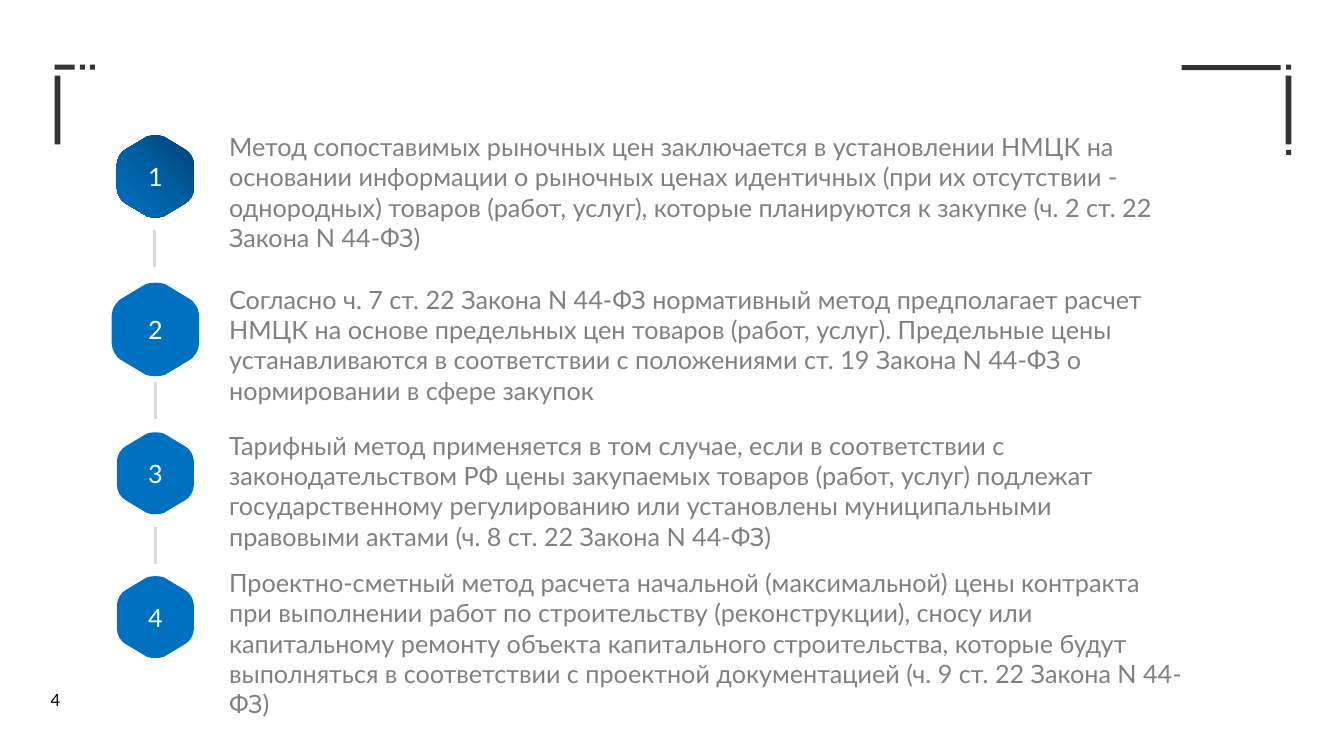
import copy
from dataclasses import dataclass

import pptx
import pptx.dml.color
import pptx.enum.dml
import pptx.enum.shapes
import pptx.enum.text
import pptx.oxml
import pptx.oxml.ns
import pptx.util

qn = pptx.oxml.ns.qn
ALIGN = pptx.enum.text.PP_ALIGN
ANCHOR = pptx.enum.text.MSO_ANCHOR
FIT = pptx.enum.text.MSO_AUTO_SIZE.SHAPE_TO_FIT_TEXT


@dataclass(frozen=True)
class Theme:
    font: str = "Lato"
    body_size: int = 18
    number_size: int = 12
    line_width: int = 2
    frame: str = "333333"
    badge: str = "0070C0"
    badge_gradient: tuple = ((0, "004272"), (0.5, "005EA2"), (1, "0070C0"))
    gradient_angle: int = 225
    connector: str = "D9D9D9"
    body: str = "808080"
    badge_text: str = "FFFFFF"
    number: str = "000000"


THEME = Theme()
COLUMNS, ROWS = 160, 90
CELL = pptx.util.Inches(1 / 12)
BADGE_CENTER = 18.5
BADGE_SIZE = (9.15, 9.85)
LARGE_BADGE_SIZE = (10.4, 11.25)
TEXT_LEFT = 27.28
CONNECTOR_LENGTH = 4.4

# left, top, width, height in grid cells
FRAME_BARS = [
    (6.5, 7.7, 2.4, 0.6), (9.5, 7.7, 0.6, 0.6), (10.7, 7.7, 0.6, 0.6),
    (6.5, 9, 0.7, 8.2),
    (153.1, 7.7, 0.6, 0.6), (140.68, 7.75, 11.8, 0.6),
    (153.05, 9, 0.7, 8.2), (153.1, 17.85, 0.6, 0.6),
]
# centre column, top row
CONNECTORS = [(18.38, 27.4), (BADGE_CENTER, 45.5), (BADGE_CENTER, 62.75)]

# badge centre row, badge size, text top, text width, text height, paragraphs
METHODS = [
    (21, BADGE_SIZE, 15.64, 117, 10.92, [
        "Метод сопоставимых рыночных цен заключается в установлении НМЦК на "
        "основании информации о рыночных ценах идентичных (при их отсутствии - "
        "однородных) товаров (работ, услуг), которые планируются к закупке "
        "(ч. 2 ст. 22 Закона N 44-ФЗ)"]),
    (39.22, LARGE_BADGE_SIZE, 33.84, 117, 10.92, [
        "Согласно ч. 7 ст. 22 Закона N 44-ФЗ нормативный метод предполагает "
        "расчет НМЦК на основе предельных цен товаров (работ, услуг). "
        "Предельные цены устанавливаются в соответствии с положениями ст. 19 "
        "Закона N 44-ФЗ о нормировании в сфере закупок"]),
    (56.34, BADGE_SIZE, 51.22, 114.6, 10.92, [
        "Тарифный метод применяется в том случае, если в соответствии с "
        "законодательством РФ цены закупаемых товаров (работ, услуг) подлежат "
        "государственному регулированию или установлены муниципальными "
        "правовыми актами (ч. 8 ст. 22 Закона N 44-ФЗ)"]),
    (73.46, BADGE_SIZE, 67.54, 116.9, 14.5, [
        "Проектно-сметный метод расчета начальной (максимальной) цены контракта",
        "при выполнении работ по строительству (реконструкции), сносу или "
        "капитальному ремонту объекта капитального строительства, которые "
        "будут выполняться в соответствии с проектной документацией "
        "(ч. 9 ст. 22 Закона N 44-ФЗ)"]),
]


def cells(*values):
    return [round(value * CELL) for value in values]


def color(value):
    return pptx.dml.color.RGBColor.from_string(value)


def write_text(shape, paragraphs, *, size, fill, align=ALIGN.LEFT,
               anchor=ANCHOR.TOP, insets=(0, 0, 0, 0), wrap=True,
               fit=pptx.enum.text.MSO_AUTO_SIZE.NONE):
    """Fill a shape with plain, unbulleted paragraphs; insets are in inches."""
    frame = shape.text_frame
    frame.word_wrap = wrap
    frame.auto_size = fit
    frame.vertical_anchor = anchor
    (frame.margin_left, frame.margin_top,
     frame.margin_right, frame.margin_bottom) = map(pptx.util.Inches, insets)
    frame.text = "\n".join(paragraphs)
    for paragraph in frame.paragraphs:
        paragraph.alignment = align
        paragraph.space_before = paragraph.space_after = pptx.util.Pt(0)
        properties = paragraph._p.get_or_add_pPr()
        properties.set("marL", "0")
        properties.set("indent", "0")
        properties.append(pptx.oxml.parse_xml(
            f"<a:buNone {pptx.oxml.ns.nsdecls('a')}/>"))
        font = paragraph.runs[0].font
        font.name, font.size, font.bold = THEME.font, pptx.util.Pt(size), False
        font.color.rgb = color(fill)


def paint(shape, fill):
    shape.shadow.inherit = False
    shape.fill.solid()
    shape.fill.fore_color.rgb = color(fill)
    shape.line.fill.background()


def paint_gradient(shape, stops, angle):
    shape.fill.gradient()
    shape.fill.gradient_angle = angle
    stop_list = shape._element.spPr.find(".//" + qn("a:gsLst"))
    stop_list.insert(1, copy.deepcopy(stop_list[0]))
    for stop, (position, value) in zip(shape.fill.gradient_stops, stops):
        stop.position = position
        stop.color.rgb = color(value)


def add_bar(slide, left, top, width, height):
    bar = slide.shapes.add_shape(pptx.enum.shapes.MSO_SHAPE.RECTANGLE,
                                 *cells(left, top, width, height))
    paint(bar, THEME.frame)


def hexagon_corners():
    """Start, two handles and end of each corner, clockwise in a unit square."""
    side = [(0, 0.35), (0, 0.29), (0.05, 0.2), (0.12, 0.17)]
    tip = [(0.39, 0.02), (0.45, 0), (0.55, 0), (0.61, 0.02)]
    upper = side + tip + [(1 - x, y) for x, y in reversed(side)]
    return upper + [(1 - x, 1 - y) for x, y in upper]


def round_corners(shape):
    """Turn the three segments that make up each corner into one curve."""
    lines = shape._element.spPr.findall(".//" + qn("a:lnTo"))
    for first in range(0, len(lines) - 2, 4):
        corner = lines[first:first + 3]
        bezier = pptx.oxml.parse_xml(
            f"<a:cubicBezTo {pptx.oxml.ns.nsdecls('a')}/>")
        corner[0].addprevious(bezier)
        for line in corner:
            bezier.append(line[0])
            line.getparent().remove(line)


def add_badge(slide, number, center_row, size):
    width, height = size
    left, top = BADGE_CENTER - width / 2, center_row - height / 2
    points = [tuple(cells(left + x * width, top + y * height))
              for x, y in hexagon_corners()]
    builder = slide.shapes.build_freeform(*points[0])
    builder.add_line_segments(points[1:], close=True)
    badge = builder.convert_to_shape()
    round_corners(badge)
    paint(badge, THEME.badge)
    write_text(badge, [str(number)], size=THEME.body_size, fill=THEME.badge_text,
               align=ALIGN.CENTER, anchor=ANCHOR.MIDDLE)
    return badge


def add_vertical_connector(slide, column, top):
    connector = slide.shapes.add_connector(
        pptx.enum.shapes.MSO_CONNECTOR.STRAIGHT,
        *cells(column, top, column, top + CONNECTOR_LENGTH))
    connector.line.color.rgb = color(THEME.connector)
    connector.line.width = pptx.util.Pt(THEME.line_width)
    connector._element.spPr.append(pptx.oxml.parse_xml(
        f"<a:effectLst {pptx.oxml.ns.nsdecls('a')}/>"))


def place_body(placeholder, top, width, height, paragraphs):
    (placeholder.left, placeholder.top,
     placeholder.width, placeholder.height) = cells(TEXT_LEFT, top, width, height)
    write_text(placeholder, paragraphs, size=THEME.body_size, fill=THEME.body,
               insets=(0, 0, 0.1, 0), fit=FIT)


def main():
    presentation = pptx.Presentation()
    presentation.slide_width, presentation.slide_height = cells(COLUMNS, ROWS)
    comparison_layout = presentation.slide_layouts[4]
    slide = presentation.slides.add_slide(comparison_layout)
    title = slide.shapes.title._element
    title.getparent().remove(title)

    for bar in FRAME_BARS:
        add_bar(slide, *bar)
    badges = []
    for number, (center_row, size, *body) in enumerate(METHODS, start=1):
        badges.append(add_badge(slide, number, center_row, size))
        place_body(slide.placeholders[number], *body)
    paint_gradient(badges[0], THEME.badge_gradient, THEME.gradient_angle)
    for column, top in CONNECTORS:
        add_vertical_connector(slide, column, top)
    slide_number = slide.shapes.add_textbox(*cells(4.85, 81.5, 4.7, 3.6))
    write_text(slide_number, ["4"], size=THEME.number_size, fill=THEME.number,
               insets=(0.1, 0.05, 0.1, 0.05), wrap=False, fit=FIT)
    presentation.save("out.pptx")


if __name__ == "__main__":
    main()
